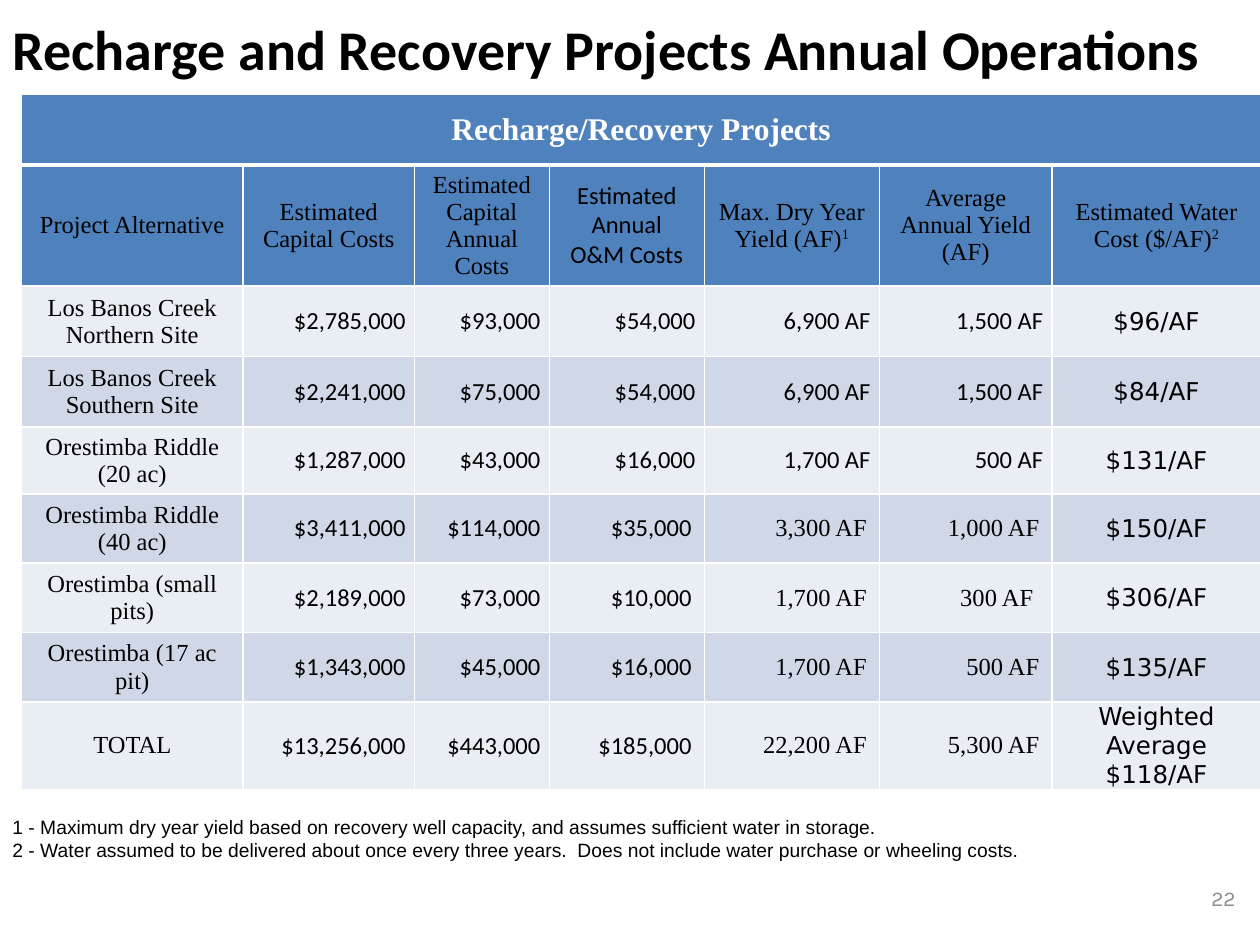
import pptx
import pptx.util
import pptx.dml.color
import pptx.enum.text
import pptx.oxml.ns
import lxml.etree

Inches = pptx.util.Inches
ALIGN = pptx.enum.text.PP_ALIGN
MIDDLE = pptx.enum.text.MSO_ANCHOR.MIDDLE

COLORS = {
    "text": "000000",
    "white": "FFFFFF",
    "header": "4F81BD",
    "light_band": "E9EDF4",
    "dark_band": "D0D8E8",
    "page_number": "8C8C8C",
}
SERIF, SANS, COST = "Times New Roman", "Calibri", "DejaVu Sans"

COLUMN_WIDTHS = [1.76, 1.36, 1.07, 1.23, 1.39, 1.37, 1.66]
ROW_HEIGHTS = [0.56, 0.96, 0.56, 0.56, 0.41, 0.55, 0.55, 0.55, 0.55]
HEADINGS = [
    ("Project Alternative", ""),
    ("Estimated Capital Costs", ""),
    ("Estimated Capital Annual Costs", ""),
    ("Estimated Annual O&M Costs", ""),
    ("Max. Dry Year Yield (AF)", "1"),
    ("Average Annual Yield (AF)", ""),
    ("Estimated Water Cost ($/AF)", "2"),
]
PROJECTS = [
    ("Los Banos Creek Northern Site", "$2,785,000", "$93,000", "$54,000", "6,900 AF", "1,500 AF", "$96/AF"),
    ("Los Banos Creek Southern Site", "$2,241,000", "$75,000", "$54,000", "6,900 AF", "1,500 AF", "$84/AF"),
    ("Orestimba Riddle (20 ac)", "$1,287,000", "$43,000", "$16,000", "1,700 AF", "500 AF", "$131/AF"),
    ("Orestimba Riddle (40 ac)", "$3,411,000", "$114,000", "$35,000", "3,300 AF", "1,000 AF", "$150/AF"),
    ("Orestimba (small pits)", "$2,189,000", "$73,000", "$10,000", "1,700 AF", "300 AF ", "$306/AF"),
    ("Orestimba (17 ac pit)", "$1,343,000", "$45,000", "$16,000", "1,700 AF", "500 AF", "$135/AF"),
    ("TOTAL", "$13,256,000", "$443,000", "$185,000", "22,200 AF", "5,300 AF", "Weighted Average $118/AF"),
]
FOOTNOTES = [
    "1 - Maximum dry year yield based on recovery well capacity, and assumes sufficient water in storage.",
    "2 - Water assumed to be delivered about once every three years.  "
    "Does not include water purchase or wheeling costs.",
]
CELL_MARGINS = (0.1, 0.05, 0.1, 0.05)
FIGURE_MARGINS = (0.07, 0, 0.07, 0)
COST_MARGINS = (0.01, 0.01, 0.01, 0)


class SlideBuilder:
    def __init__(self, slide):
        self.slide = slide

    def style(self, paragraph, font, size, color="text", bold=False, align=ALIGN.LEFT):
        paragraph.alignment = align
        paragraph.font.name = font
        paragraph.font.size = pptx.util.Pt(size)
        paragraph.font.bold = bold
        paragraph.font.color.rgb = pptx.dml.color.RGBColor.from_string(COLORS[color])

    def title(self, text, left, top, width, height):
        title = self.slide.shapes.title
        title.left, title.top = Inches(left), Inches(top)
        title.width, title.height = Inches(width), Inches(height)
        title.text_frame.text = text
        title.text_frame.vertical_anchor = MIDDLE
        self.style(title.text_frame.paragraphs[0], SANS, 32, bold=True)

    def text(self, lines, left, top, width, height, **look):
        box = self.slide.shapes.add_textbox(Inches(left), Inches(top), Inches(width), Inches(height))
        box.text_frame.word_wrap = True
        box.text_frame.text = "\n".join(lines)
        for paragraph in box.text_frame.paragraphs:
            self.style(paragraph, **look)

    def table(self, left, top):
        frame = self.slide.shapes.add_table(
            len(ROW_HEIGHTS), len(COLUMN_WIDTHS), Inches(left), Inches(top),
            Inches(sum(COLUMN_WIDTHS)), Inches(sum(ROW_HEIGHTS)))
        for column, width in zip(frame.table.columns, COLUMN_WIDTHS):
            column.width = Inches(width)
        for row, height in zip(frame.table.rows, ROW_HEIGHTS):
            row.height = Inches(height)
        return frame.table

    def borders(self, cell, bottom):
        properties = cell._tc.get_or_add_tcPr()
        for side, points in (("L", 1), ("R", 1), ("T", 1), ("B", bottom)):
            line = lxml.etree.SubElement(
                properties, pptx.oxml.ns.qn(f"a:ln{side}"), w=str(pptx.util.Pt(points)))
            fill = lxml.etree.SubElement(line, pptx.oxml.ns.qn("a:solidFill"))
            lxml.etree.SubElement(fill, pptx.oxml.ns.qn("a:srgbClr"), val=COLORS["white"])

    def cell(self, cell, text, fill, font=SERIF, size=14, color="text", bold=False,
             align=ALIGN.CENTER, margins=CELL_MARGINS, superscript="", bottom=1):
        self.borders(cell, bottom)
        cell.fill.solid()
        cell.fill.fore_color.rgb = pptx.dml.color.RGBColor.from_string(COLORS[fill])
        cell.vertical_anchor = MIDDLE
        cell.margin_left, cell.margin_top, cell.margin_right, cell.margin_bottom = map(Inches, margins)
        paragraph = cell.text_frame.paragraphs[0]
        paragraph.add_run().text = text
        if superscript:
            note = paragraph.add_run()
            note.text = superscript
            note._r.get_or_add_rPr().set("baseline", "30000")
        self.style(paragraph, font, size, color, bold, align)


def figure_look(project, column):
    if column == 0:
        return {}
    if column == 6:
        return {"font": COST, "margins": COST_MARGINS}
    early = project < 3
    return {
        "font": SANS if early or column < 4 else SERIF,
        "margins": FIGURE_MARGINS if early or column < 3 else CELL_MARGINS,
        "align": ALIGN.RIGHT,
    }


def main():
    deck = pptx.Presentation()
    deck.slide_width, deck.slide_height = Inches(10), Inches(7.5)
    builder = SlideBuilder(deck.slides.add_slide(deck.slide_layouts[5]))
    builder.title("Recharge and Recovery Projects Annual Operations", 0, -0.25, 10, 1.26)

    table = builder.table(0.17, 0.75)
    table.cell(0, 0).merge(table.cell(0, len(COLUMN_WIDTHS) - 1))
    builder.cell(table.cell(0, 0), "Recharge/Recovery Projects", "header",
                 size=18, color="white", bold=True, bottom=3)
    for column, (heading, note) in enumerate(HEADINGS):
        builder.cell(table.cell(1, column), heading, "header",
                     font=SANS if column == 3 else SERIF, superscript=note)
    for project, values in enumerate(PROJECTS):
        band = "dark_band" if project % 2 else "light_band"
        for column, value in enumerate(values):
            builder.cell(table.cell(project + 2, column), value, band, **figure_look(project, column))

    builder.text(FOOTNOTES, 0, 6.42, 8.75, 0.47, font="Arial", size=11)
    builder.text(["22"], 9.42, 6.98, 0.58, 0.52, font="Karla", size=12,
                 color="page_number", align=ALIGN.CENTER)
    deck.save("out.pptx")


if __name__ == "__main__":
    main()
